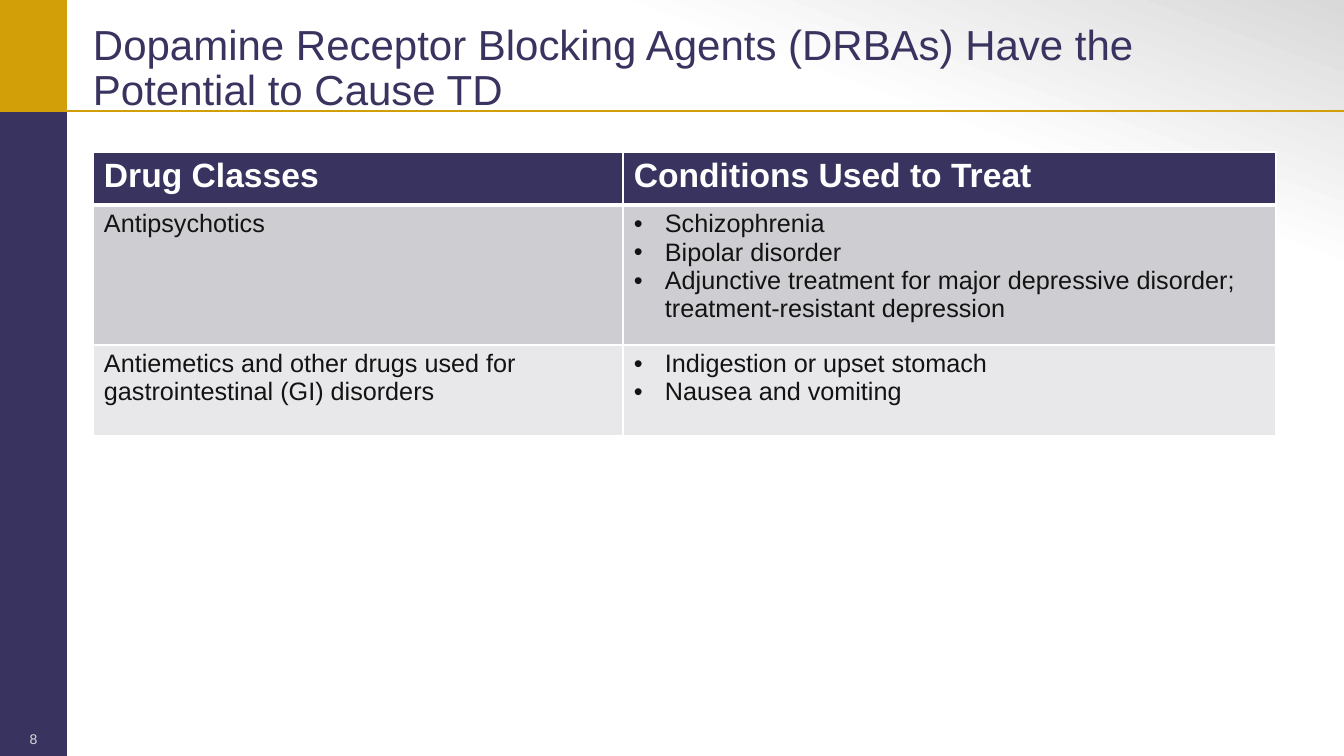
import pptx
import pptx.dml.color
import pptx.enum.shapes
import pptx.enum.text
import pptx.oxml
import pptx.oxml.ns
import pptx.util

EMU_PER_PX = 914400 / 100.8
SLIDE_WIDTH, SLIDE_HEIGHT = 1344, 756
SIDEBAR_WIDTH, HEADER_HEIGHT = 67, 111
NAVY, GOLD, WHITE, INK, SILVER = "39345F", "D39F08", "FFFFFF", "141313", "D9D9D9"
FONT = "Arial"
COLUMN_WIDTHS = [530, 653]
ROW_HEIGHTS = [53, 140, 91]
ROW_FILLS = [NAVY, "CECED2", "E8E8EA"]
DRUG_ROWS = [
    ("Drug Classes", "Conditions Used to Treat"),
    ("Antipsychotics", [
        "Schizophrenia",
        "Bipolar disorder",
        "Adjunctive treatment for major depressive disorder; treatment-resistant depression",
    ]),
    ("Antiemetics and other drugs used for gastrointestinal (GI) disorders", [
        "Indigestion or upset stomach",
        "Nausea and vomiting",
    ]),
]


def px(length):
    return pptx.util.Emu(round(length * EMU_PER_PX))


def color(hex_string):
    return pptx.dml.color.RGBColor.from_string(hex_string)


def set_attributes(target, values):
    for name, value in values.items():
        setattr(target, name, value)


def format_text(paragraph, size, hex_string, bold=False):
    font = paragraph.font
    set_attributes(font, {"name": FONT, "size": pptx.util.Pt(size), "bold": bold})
    font.color.rgb = color(hex_string)


def set_margins(target, horizontal, vertical):
    set_attributes(target, {
        "margin_left": px(horizontal), "margin_right": px(horizontal),
        "margin_top": px(vertical), "margin_bottom": px(vertical),
    })


def add_rectangle(slide, box):
    shape = slide.shapes.add_shape(
        pptx.enum.shapes.MSO_SHAPE.RECTANGLE, *map(px, box))
    shape.shadow.inherit = False
    shape.line.fill.background()
    return shape


def add_backdrop(slide, box):
    fill = add_rectangle(slide, box).fill
    fill.gradient()
    fill.gradient_angle = 70
    for stop, (position, hex_string) in zip(
            fill.gradient_stops, [(0.78, WHITE), (1, SILVER)]):
        stop.position = position
        stop.color.rgb = color(hex_string)


def add_frame(slide, box):
    left, top, width, height = box
    blocks = [
        (top, HEADER_HEIGHT, GOLD),
        (top + HEADER_HEIGHT, height - HEADER_HEIGHT, NAVY),
    ]
    for block_top, block_height, hex_string in blocks:
        block = add_rectangle(slide, (left, block_top, SIDEBAR_WIDTH, block_height))
        block.fill.solid()
        block.fill.fore_color.rgb = color(hex_string)
    rule_top = px(top + HEADER_HEIGHT)
    rule = slide.shapes.add_connector(
        pptx.enum.shapes.MSO_CONNECTOR.STRAIGHT,
        px(left + width), rule_top, px(left), rule_top)
    rule.line.color.rgb = color(GOLD)
    rule.line.width = pptx.util.Pt(2)
    properties = rule._element.find(pptx.oxml.ns.qn("p:spPr"))
    pptx.oxml.ns.qn("a:effectLst")
    properties.append(pptx.oxml.parse_xml(
        f'<a:effectLst {pptx.oxml.ns.nsdecls("a")}/>'))


def add_page_number(slide, box, number):
    frame = slide.shapes.add_textbox(*map(px, box)).text_frame
    frame.word_wrap = True
    paragraph = frame.paragraphs[0]
    paragraph.text = number
    paragraph.alignment = pptx.enum.text.PP_ALIGN.CENTER
    format_text(paragraph, 10, SILVER)


def add_bullet(paragraph):
    properties = paragraph._p.get_or_add_pPr()
    properties.set("marL", str(px(31)))
    properties.set("indent", str(-px(31)))
    namespace = pptx.oxml.ns.nsdecls("a")
    for markup in (f'<a:buFont {namespace} typeface="{FONT}"/>',
                   f'<a:buChar {namespace} char="•"/>'):
        properties.append(pptx.oxml.parse_xml(markup))


def set_borders(cell, row_index):
    top_width = 3 if row_index == 1 else 1
    bottom_width = 3 if row_index == 0 else 1
    sides = {"lnL": 1, "lnR": 1, "lnT": top_width, "lnB": bottom_width}
    properties = cell._tc.get_or_add_tcPr()
    for position, (tag, points) in enumerate(sides.items()):
        properties.insert(position, pptx.oxml.parse_xml(
            f'<a:{tag} {pptx.oxml.ns.nsdecls("a")} w="{pptx.util.Pt(points)}">'
            f'<a:solidFill><a:srgbClr val="{WHITE}"/></a:solidFill></a:{tag}>'))


def fill_cell(cell, content, row_index):
    cell.fill.solid()
    cell.fill.fore_color.rgb = color(ROW_FILLS[row_index])
    set_margins(cell, 11, 5)
    set_borders(cell, row_index)
    bulleted = isinstance(content, list)
    cell.text = "\n".join(content) if bulleted else content
    for paragraph in cell.text_frame.paragraphs:
        if row_index == 0:
            format_text(paragraph, 24, WHITE, True)
        else:
            format_text(paragraph, 18, INK)
        if bulleted:
            add_bullet(paragraph)


def add_drug_table(slide, box):
    table = slide.shapes.add_table(
        len(DRUG_ROWS), len(COLUMN_WIDTHS), *map(px, box)).table
    for column, width in zip(table.columns, COLUMN_WIDTHS):
        column.width = px(width)
    for row_index, contents in enumerate(DRUG_ROWS):
        table.rows[row_index].height = px(ROW_HEIGHTS[row_index])
        for column_index, content in enumerate(contents):
            fill_cell(table.cell(row_index, column_index), content, row_index)


def place_title(slide, box, text):
    title = slide.shapes.title
    set_attributes(title, dict(zip(("left", "top", "width", "height"), map(px, box))))
    frame = title.text_frame
    set_attributes(frame, {
        "text": text,
        "word_wrap": True,
        "auto_size": pptx.enum.text.MSO_AUTO_SIZE.NONE,
        "vertical_anchor": pptx.enum.text.MSO_ANCHOR.BOTTOM,
    })
    set_margins(frame, 0, 0)
    paragraph = frame.paragraphs[0]
    set_attributes(paragraph, {
        "alignment": pptx.enum.text.PP_ALIGN.LEFT, "line_spacing": 0.9})
    format_text(paragraph, 30, NAVY)
    slide.shapes._spTree.append(title._element)


def main():
    presentation = pptx.Presentation()
    set_attributes(presentation, {
        "slide_width": px(SLIDE_WIDTH), "slide_height": px(SLIDE_HEIGHT)})
    slide = presentation.slides.add_slide(presentation.slide_layouts[5])
    whole = (0, 0, SLIDE_WIDTH, SLIDE_HEIGHT)
    add_backdrop(slide, whole)
    add_frame(slide, whole)
    add_page_number(slide, (0, 726, SIDEBAR_WIDTH, 30), "8")
    add_drug_table(slide, (93, 152, sum(COLUMN_WIDTHS), sum(ROW_HEIGHTS)))
    place_title(slide, (93, 11, sum(COLUMN_WIDTHS), 104),
                "Dopamine Receptor Blocking Agents (DRBAs) Have the Potential to Cause TD")
    presentation.save("out.pptx")


if __name__ == "__main__":
    main()
